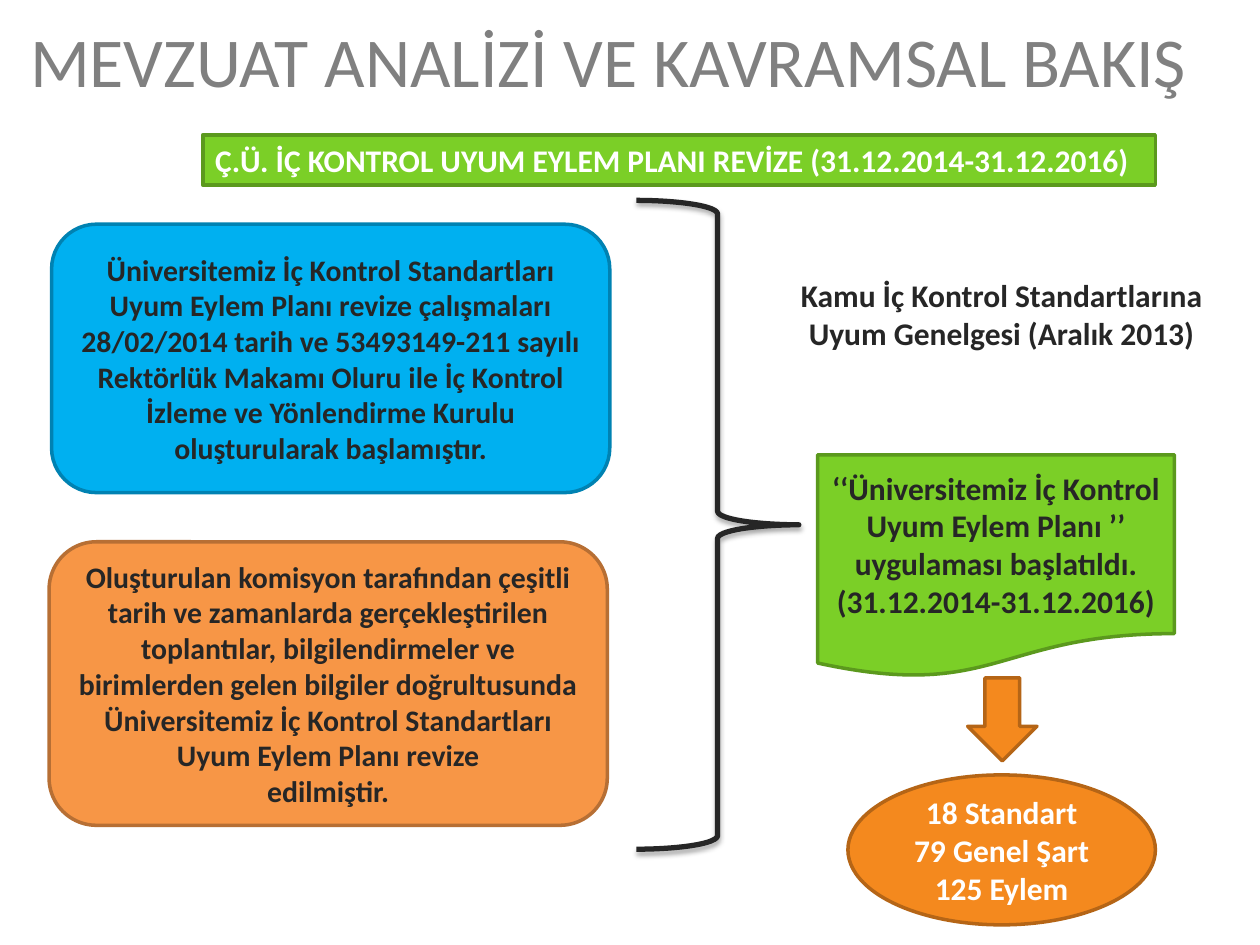
from lxml.etree import SubElement
from pptx import Presentation
from pptx.dml.color import RGBColor as Rgb
from pptx.enum.shapes import MSO_SHAPE as Kind
from pptx.enum.text import MSO_ANCHOR as Anchor, PP_ALIGN as Align
from pptx.oxml.ns import qn
from pptx.util import Inches, Pt

WIDTH, HEIGHT = 10, 7.5
COLORS = {
    "title": "808080", "dark": "262626", "white": "FFFFFF", "shadow": "000000",
    "blue": "00B0F0", "blue_edge": "0082B2",
    "peach": "F79646", "peach_edge": "B76F34",
    "green": "7BCF27", "green_edge": "5B991D",
    "orange": "F4891E", "orange_edge": "B56516",
}
STYLES = {
    "title": {"size": 40, "bold": False, "color": "title", "align": Align.LEFT, "anchor": Anchor.MIDDLE},
    "banner": {"size": 18, "bold": True, "color": "white", "align": Align.LEFT, "anchor": Anchor.TOP},
    "step": {"size": 17, "bold": True, "color": "dark", "align": Align.CENTER, "anchor": Anchor.MIDDLE},
    "result": {"size": 18, "bold": True, "color": "dark", "align": Align.CENTER, "anchor": Anchor.MIDDLE},
    "note": {"size": 18, "bold": True, "color": "dark", "align": Align.CENTER, "anchor": Anchor.TOP},
    "totals": {"size": 18, "bold": True, "color": "white", "align": Align.CENTER, "anchor": Anchor.MIDDLE},
}
TEXTS = [
    ((0.14, 0, 9.8, 0.94), "title", ["MEVZUAT ANALİZİ VE KAVRAMSAL BAKIŞ"]),
    ((6.12, 2.14, 3.66, 0.71), "note",
     ["Kamu İç Kontrol Standartlarına Uyum Genelgesi (Aralık 2013)"]),
]
SHAPES = [
    (Kind.ROUNDED_RECTANGLE, (0.41, 1.78, 4.43, 2.13), "blue", "step", [
        "Üniversitemiz İç Kontrol Standartları Uyum Eylem Planı revize çalışmaları "
        "28/02/2014 tarih ve 53493149-211 sayılı Rektörlük Makamı Oluru ile İç Kontrol "
        "İzleme ve Yönlendirme Kurulu oluşturularak başlamıştır."]),
    (Kind.ROUNDED_RECTANGLE, (0.39, 4.3, 4.43, 2.25), "peach", "step", [
        "Oluşturulan komisyon tarafından çeşitli tarih ve zamanlarda gerçekleştirilen "
        "toplantılar, bilgilendirmeler ve birimlerden gelen bilgiler doğrultusunda "
        "Üniversitemiz İç Kontrol Standartları Uyum Eylem Planı revize",
        "edilmiştir."]),
    (Kind.FLOWCHART_DOCUMENT, (6.49, 3.61, 2.83, 1.77), "green", "result", [
        "‘‘Üniversitemiz İç Kontrol Uyum Eylem Planı ’’ uygulaması başlatıldı.",
        "(31.12.2014-31.12.2016)"]),
    (Kind.OVAL, (6.73, 6.15, 2.44, 1.19), "orange", "totals",
     ["18 Standart", "79 Genel Şart", "125 Eylem"]),
    (Kind.DOWN_ARROW, (7.68, 5.38, 0.55, 0.66), "orange", None, []),
    (Kind.RECTANGLE, (1.61, 1.07, 7.56, 0.4), "green", "banner",
     ["Ç.Ü. İÇ KONTROL UYUM EYLEM PLANI REVİZE (31.12.2014-31.12.2016)"]),
]
BRACE = (5.05, 1.59, 1.29, 5.15)
SHADOW = {"blurRad": Pt(3.1), "dist": Pt(1.8), "dir": 90 * 60000, "rotWithShape": 0}


def color(name):
    return Rgb.from_string(COLORS[name])


def write(box, style_name, lines):
    style = STYLES[style_name]
    frame = box.text_frame
    frame.word_wrap = True
    frame.vertical_anchor = style["anchor"]
    for index, line in enumerate(lines):
        para = frame.add_paragraph() if index else frame.paragraphs[0]
        para.alignment = style["align"]
        span = para.add_run()
        span.text = line
        formats = {"name": "Calibri", "size": Pt(style["size"]), "bold": style["bold"]}
        for key, value in formats.items():
            setattr(span.font, key, value)
        span.font.color.rgb = color(style["color"])


def add_shape(page, kind, place, edge, weight, fill=None):
    shape = page.shapes.add_shape(kind, *map(Inches, place))
    shape.shadow.inherit = False
    if fill:
        shape.fill.solid()
        shape.fill.fore_color.rgb = color(fill)
    else:
        shape.fill.background()
    shape.line.color.rgb = color(edge)
    shape.line.width = Pt(weight)
    return shape


def cast_shadow(shape):
    effects = shape.element.spPr.find(qn("a:effectLst"))
    values = {key: str(int(value)) for key, value in SHADOW.items()}
    outer = SubElement(effects, qn("a:outerShdw"), values)
    tint = SubElement(outer, qn("a:srgbClr"), val=COLORS["shadow"])
    SubElement(tint, qn("a:alpha"), val="35000")


def main():
    deck = Presentation()
    deck.slide_width, deck.slide_height = Inches(WIDTH), Inches(HEIGHT)
    page = deck.slides.add_slide(deck.slide_layouts[6])
    for place, style, lines in TEXTS:
        write(page.shapes.add_textbox(*map(Inches, place)), style, lines)
    cast_shadow(add_shape(page, Kind.RIGHT_BRACE, BRACE, "dark", 3))
    for kind, place, fill, style, lines in SHAPES:
        shape = add_shape(page, kind, place, fill + "_edge", 2, fill)
        if lines:
            write(shape, style, lines)
    deck.save("out.pptx")


if __name__ == "__main__":
    main()
